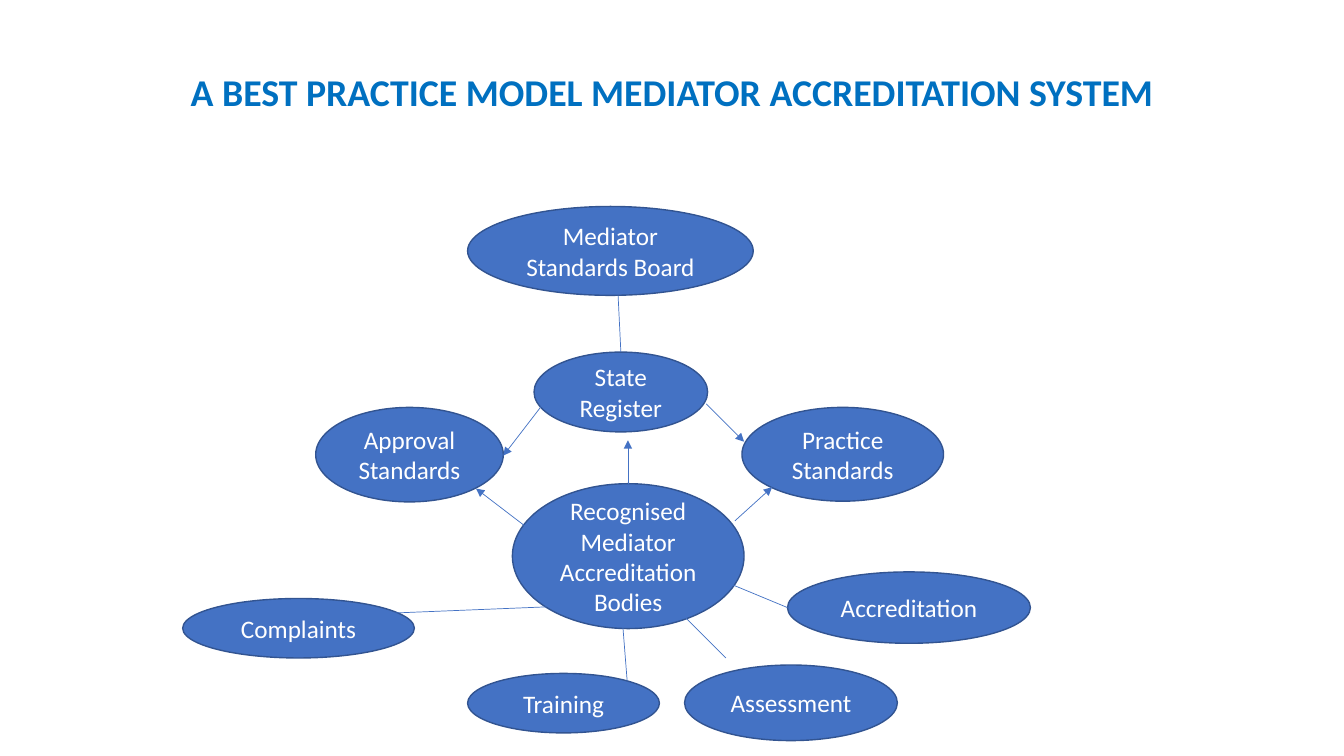
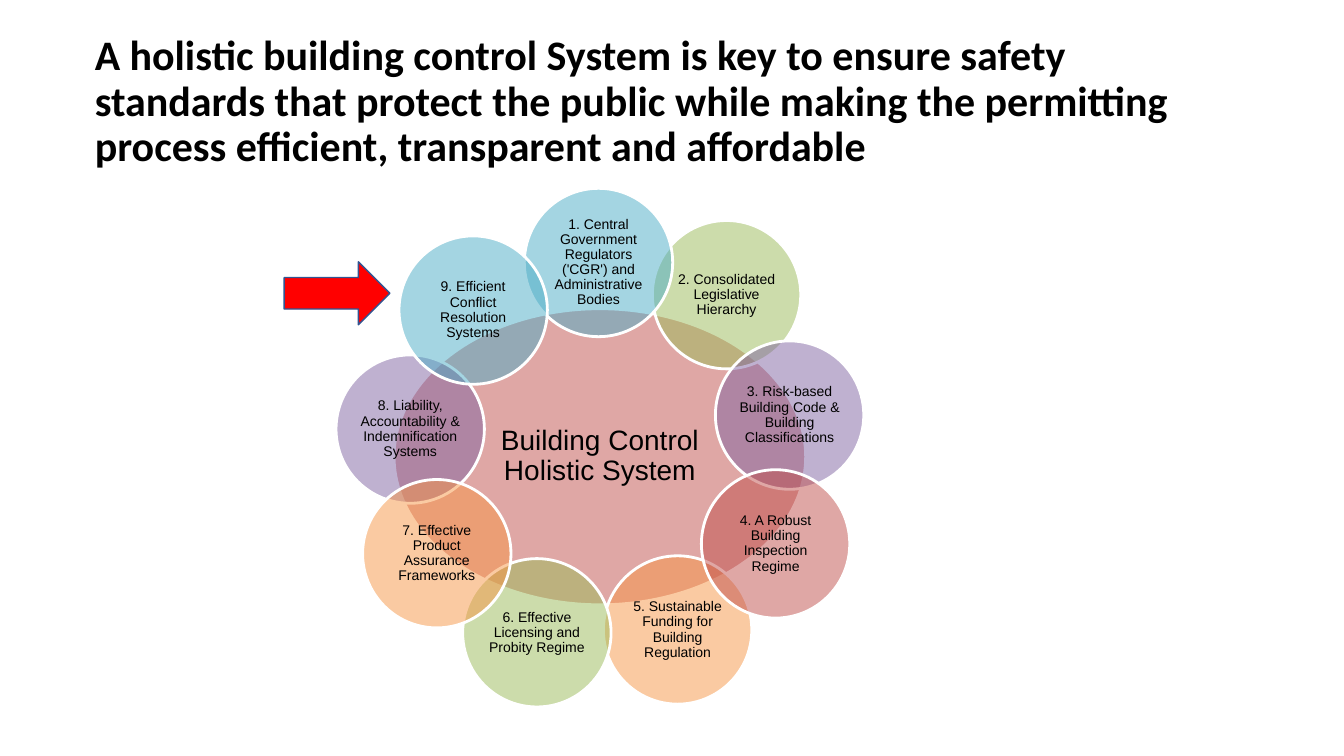
from dataclasses import dataclass

from lxml import etree
from pptx import Presentation
from pptx.dml.color import RGBColor as RGB
from pptx.enum.shapes import MSO_CONNECTOR as CONN, MSO_SHAPE as SHAPE
from pptx.enum.text import MSO_ANCHOR as ANCHOR, MSO_AUTO_SIZE as FIT, PP_ALIGN as AL
from pptx.oxml.ns import qn
from pptx.util import Pt


@dataclass(frozen=True)
class Theme:
    heading: str = "0070C0"
    node: str = "4472C4"
    outline: str = "325491"
    white: str = "FFFFFF"
    black: str = "000000"
    alert: str = "FF0000"
    red: str = "C0504D"
    green: str = "9BBB59"
    purple: str = "8064A2"
    teal: str = "4BACC6"
    orange: str = "F79646"
    body_font: str = "Calibri"
    ring_font: str = "Arial"
    heading_size: int = 27
    statement_size: int = 30
    node_size: int = 18
    hub_size: int = 20
    ring_size: int = 10


T = Theme()


def write(sp, text, *, size, color, font=T.body_font, bold=False,
          align=AL.CENTER, spacing=1.0, inset=None):
    """Put one formatted paragraph in a shape or placeholder."""
    tf = sp.text_frame
    tf.word_wrap = True
    tf.auto_size = FIT.NONE
    tf.vertical_anchor = ANCHOR.MIDDLE
    if inset is not None:
        tf.margin_left = tf.margin_right = Pt(inset)
        tf.margin_top = tf.margin_bottom = Pt(inset)
    p = tf.paragraphs[0]
    p.alignment = align
    p.line_spacing = spacing
    r = p.add_run()
    r.text = text
    r.font.name, r.font.size, r.font.bold = font, Pt(size), bold
    r.font.color.rgb = RGB.from_string(color)


def add_shape(slide, kind, box, fill, line, width=1, alpha=None):
    """Add a flat preset shape; alpha is its opacity in percent."""
    sp = slide.shapes.add_shape(kind, *map(Pt, box))
    sp.shadow.inherit = False
    sp.fill.solid()
    sp.fill.fore_color.rgb = RGB.from_string(fill)
    sp.line.color.rgb = RGB.from_string(line)
    sp.line.width = Pt(width)
    if alpha is not None:
        clr = sp.fill._xPr.find(qn("a:solidFill"))[0]
        etree.SubElement(clr, qn("a:alpha"), val=str(alpha * 1000))
    return sp


prs = Presentation()
prs.slide_width, prs.slide_height = Pt(960), Pt(540)

# Slides and their titles
titles = [
    ("A BEST PRACTICE MODEL MEDIATOR ACCREDITATION SYSTEM",
     (66, 29, 828, 76), T.heading_size, T.heading, AL.CENTER),
    ("A holistic building control System is key to ensure safety standards that "
     "protect the public while making the permitting process efficient, "
     "transparent and affordable",
     (60.5, 21, 828, 104.5), T.statement_size, T.black, AL.LEFT),
]
for text, box, size, color, align in titles:
    slide = prs.slides.add_slide(prs.slide_layouts[5])
    title = slide.shapes.title
    title.left, title.top, title.width, title.height = map(Pt, box)
    write(title, text, size=size, color=color, bold=True, align=align, spacing=0.9)
model, holistic = prs.slides

# Accreditation model: nodes
nodes = [
    ("Mediator Standards Board", (334, 147.5, 204, 63.5)),
    ("Recognised Mediator Accreditation Bodies", (366, 345.5, 165.5, 103.5)),
    ("Training", (334, 481, 137, 42.5)),
    ("Approval Standards", (225.5, 291, 134, 67.5)),
    ("Practice Standards", (530, 291, 144, 67)),
    ("Complaints", (130.5, 427.5, 165.5, 42.5)),
    ("Accreditation", (562.5, 408.5, 173.5, 51)),
    ("State Register", (381.5, 251.5, 124, 57)),
    ("Assessment", (489, 475, 152, 54)),
]
for text, box in nodes:
    sp = add_shape(model, SHAPE.OVAL, box, T.node, T.outline)
    write(sp, text, size=T.node_size, color=T.white)

# Accreditation model: plain links and arrows, as (from x, from y, to x, to y)
links = [
    (390.5, 433.5, 278.5, 438),
    (445, 448.5, 448, 486.5),
    (521.5, 417, 562.5, 434),
    (479, 430.5, 518.5, 470),
    (441.5, 211, 443.5, 251.5),
]
arrows = [
    (376, 376.5, 340, 349),
    (525, 372, 551.5, 348),
    (388, 288.5, 359.5, 325.5),
    (504.5, 288.5, 531.5, 315.5),
    (448.5, 345.5, 448.5, 314.5),
]
for ends in links + arrows:
    link = model.shapes.add_connector(CONN.STRAIGHT, *map(Pt, ends))
    link.line.color.rgb = RGB.from_string(T.node)
    link.line.width = Pt(0.5)
    if ends in arrows:
        etree.SubElement(link.line._get_or_add_ln(), qn("a:tailEnd"), type="triangle")
    etree.SubElement(link._element.spPr, qn("a:effectLst"))

# Holistic system: hub
hub = add_shape(holistic, SHAPE.OVAL, (281.5, 220.5, 294, 211.5),
                T.red, T.white, width=2, alpha=50)
write(hub, "Building Control Holistic System", size=T.hub_size, color=T.black,
      font=T.ring_font, spacing=0.9, inset=2)

# Holistic system: ring of equal circles, listed from back to front
DIAMETER = 106
ring = [
    ("2. Consolidated Legislative Hierarchy", 466, 157.5, T.green),
    ("3. Risk-based Building Code & Building Classifications", 511, 243.5, T.purple),
    ("1. Central Government Regulators ('CGR') and Administrative Bodies",
     374.5, 134.5, T.teal),
    ("5. Sustainable Funding for Building Regulation", 431, 397, T.orange),
    ("4. A Robust Building Inspection Regime", 501, 335.5, T.red),
    ("6. Effective Licensing and Probity Regime", 330.5, 399, T.green),
    ("8. Liability, Accountability & Indemnification Systems", 240, 253.5, T.purple),
    ("9. Efficient Conflict Resolution Systems", 285, 168.5, T.teal),
    ("7. Effective Product Assurance Frameworks", 259, 342.5, T.orange),
]
for text, x, y, color in ring:
    sp = add_shape(holistic, SHAPE.OVAL, (x, y, DIAMETER, DIAMETER),
                   color, T.white, width=2, alpha=50)
    write(sp, text, size=T.ring_size, color=T.black, font=T.ring_font,
          spacing=0.9, inset=0.8)

# Holistic system: pointer to the ninth circle
add_shape(holistic, SHAPE.RIGHT_ARROW, (203, 187, 75.5, 45), T.alert, T.outline)

prs.save("out.pptx")
